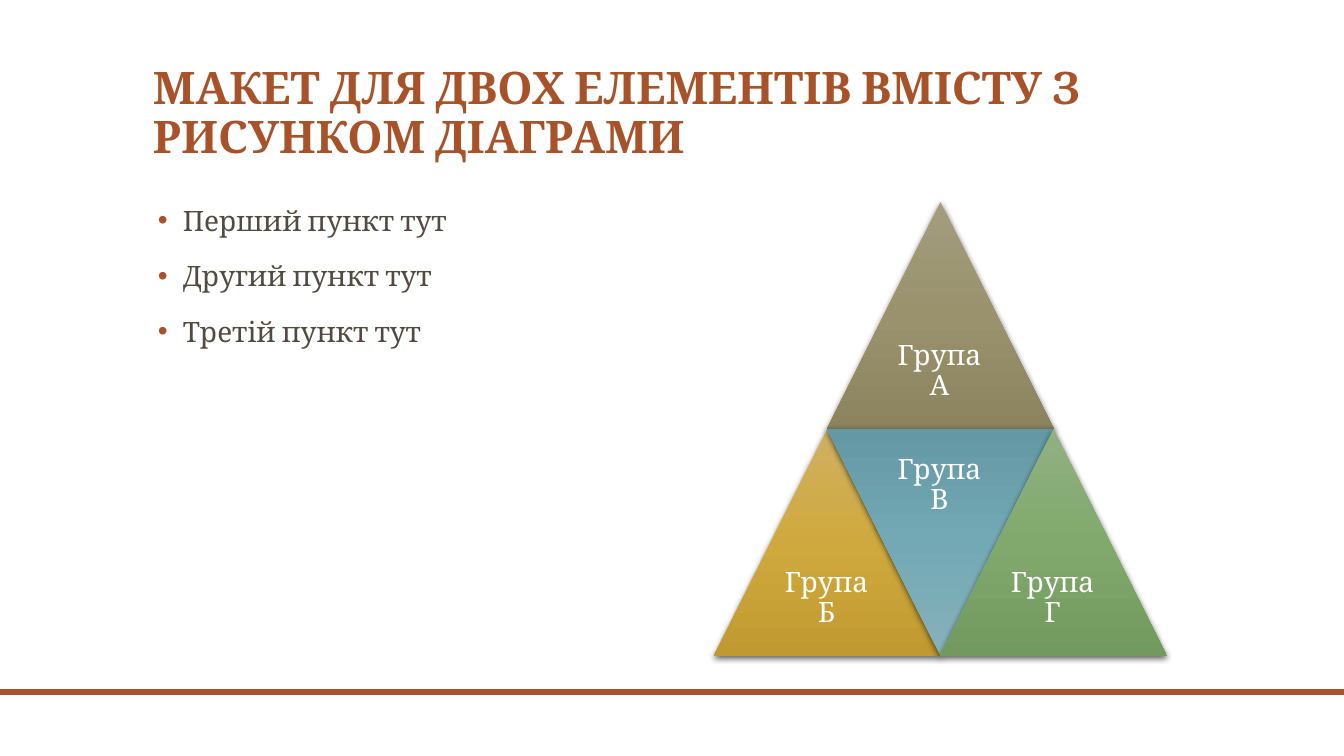
from copy import deepcopy

from lxml.etree import SubElement
from pptx import Presentation
from pptx.dml.color import RGBColor
from pptx.enum.shapes import MSO_SHAPE
from pptx.enum.text import MSO_ANCHOR, PP_ALIGN
from pptx.oxml.ns import qn
from pptx.util import Emu, Pt

ACCENT, BODY, WHITE = "A85229", "514A40", "FFFFFF"


def rgb(value):
    return RGBColor.from_string(value)


class Deck:
    """Hold the slide, its pixel scale and its text style."""

    scale = 914400 / 100.8
    font = "Cambria"

    def __init__(self, width, height):
        self.prs = Presentation()
        self.prs.slide_width, self.prs.slide_height = self.px(width, height)
        self.s = self.prs.slides.add_slide(self.prs.slide_layouts[6])

    def px(self, *lengths):
        return [Emu(round(n * self.scale)) for n in lengths]

    def apply(self, target, values):
        for name, value in values.items():
            setattr(target, name, value)

    def shape(self, kind, *box):
        sp = self.s.shapes.add_shape(kind, *self.px(*box))
        sp.shadow.inherit = False
        sp.line.fill.background()
        return sp

    def bar(self, *box):
        sp = self.shape(MSO_SHAPE.RECTANGLE, *box)
        sp.fill.solid()
        sp.fill.fore_color.rgb = rgb(ACCENT)

    def triangle(self, x, y, side, colors, rotation):
        sp = self.shape(MSO_SHAPE.ISOSCELES_TRIANGLE, x, y, side, side)
        sp.rotation = rotation
        sp.fill.gradient()
        sp.fill.gradient_angle = 270
        stops = sp.element.spPr.find(".//" + qn("a:gsLst"))
        stops.append(deepcopy(stops[0]))
        for i, color in enumerate(colors):
            self.apply(sp.fill.gradient_stops[i], {"position": i / 2})
            sp.fill.gradient_stops[i].color.rgb = rgb(color)
        effects = sp.element.spPr.find(qn("a:effectLst"))
        shadow = SubElement(effects, qn("a:outerShdw"), blurRad=str(Pt(4.5)),
                            dist=str(Pt(1.5)), dir="5400000", rotWithShape="0")
        black = SubElement(shadow, qn("a:srgbClr"), val="000000")
        SubElement(black, qn("a:alpha"), val="63000")

    def bullet(self, p):
        margin, indent = self.px(30, -25)
        pPr = p._p.get_or_add_pPr()
        pPr.set("marL", str(margin))
        pPr.set("indent", str(indent))
        SubElement(SubElement(pPr, qn("a:buClr")), qn("a:srgbClr"), val=ACCENT)
        SubElement(pPr, qn("a:buFont"), typeface="Arial")
        SubElement(pPr, qn("a:buChar"), char="•")

    def text(self, box, lines, size, color, bold=False, bullets=False,
             frame=None, para=None):
        tf = self.s.shapes.add_textbox(*self.px(*box)).text_frame
        self.apply(tf, {"word_wrap": True, **(frame or {})})
        for i, line in enumerate(lines):
            p = tf.paragraphs[0] if i == 0 else tf.add_paragraph()
            if bullets:
                self.bullet(p)
            self.apply(p, {"line_spacing": 0.9, **(para or {})})
            if i:
                p.space_before = Pt(18)
            r = p.add_run()
            r.text = line
            self.apply(r.font, {"name": self.font, "size": Pt(size), "bold": bold})
            r.font.color.rgb = rgb(color)

    def label(self, x, y, side, line):
        inset, = self.px(8)
        frame = {f"margin_{edge}": inset for edge in ("left", "top", "right", "bottom")}
        self.text((x, y, side, side), [line], 20, WHITE,
                  frame={"vertical_anchor": MSO_ANCHOR.MIDDLE, **frame},
                  para={"alignment": PP_ALIGN.CENTER})


def main():
    deck = Deck(1344, 756)
    deck.bar(0, 689, 1344, 6)
    deck.text((143, 42, 1058, 126), ["МАКЕТ ДЛЯ ДВОХ ЕЛЕМЕНТІВ ВМІСТУ З РИСУНКОМ ДІАГРАМИ"],
              32, ACCENT, bold=True, frame={"vertical_anchor": MSO_ANCHOR.BOTTOM})
    deck.text((143, 202, 521, 454),
              [f"{order} пункт тут" for order in ("Перший", "Другий", "Третій")],
              20, BODY, bullets=True)

    left, top, side = 714, 202, 227
    half, quarter = side // 2, side // 4
    groups = [
        ("А", 1, 0, 0, ("A39D7F", "9A926C", "8B845E")),
        ("Б", 0, 1, 0, ("D0B062", "D0A93E", "C09A30")),
        ("В", 1, 1, 180, ("86B1BB", "73A9B5", "6398A4")),
        ("Г", 2, 1, 0, ("90B081", "81A96D", "72995E")),
    ]
    for letter, column, row, rotation, colors in groups:
        x, y = left + column * half, top + row * side
        deck.triangle(x, y, side, colors, rotation)
        deck.label(x + quarter, y if rotation else y + half, half, f"Група {letter}")
    deck.prs.save("out.pptx")


if __name__ == "__main__":
    main()
